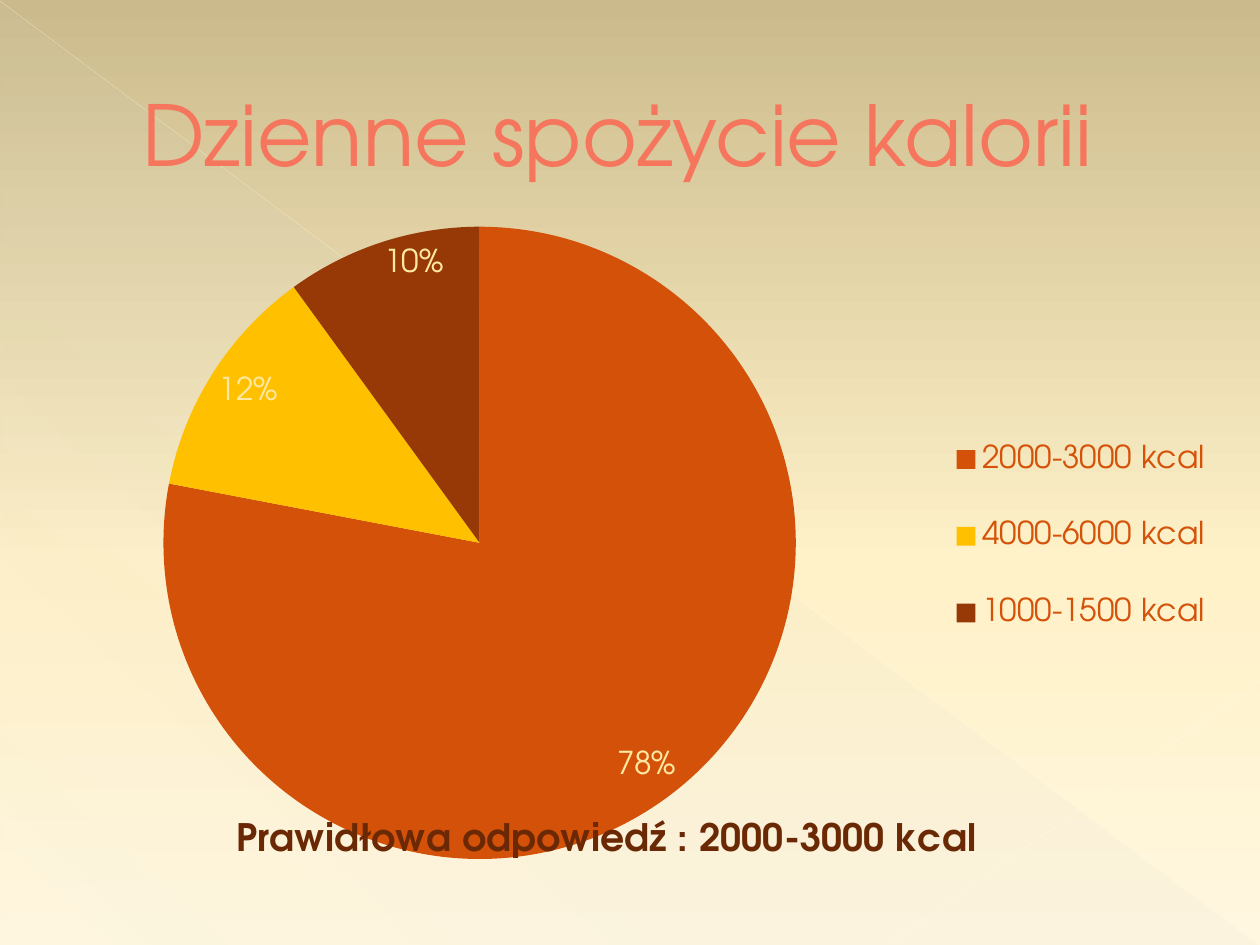
from dataclasses import dataclass

from lxml import etree
from pptx import Presentation
from pptx.chart.data import CategoryChartData
from pptx.dml.color import RGBColor
from pptx.enum.chart import XL_CHART_TYPE as ChartType
from pptx.enum.chart import XL_LABEL_POSITION as LabelPosition
from pptx.enum.chart import XL_LEGEND_POSITION as LegendPosition
from pptx.enum.shapes import MSO_CONNECTOR as Connector
from pptx.enum.shapes import MSO_SHAPE as Shape
from pptx.enum.text import MSO_ANCHOR as Anchor
from pptx.oxml import parse_xml
from pptx.oxml.ns import nsdecls, qn
from pptx.util import Cm, Pt


@dataclass(frozen=True)
class Theme:
    font: str = "TeX Gyre Adventor"
    heading: str = "F6755D"
    heading_outline: str = "933806"
    answer: str = "6A2904"
    legend: str = "D55209"
    label: str = "FFE8A2"
    slices: tuple = ("D45109", "FFC000", "963906")
    # Gradient stops: position %, colour, opacity %
    backdrop: tuple = ((0, "CBBB8C", 100), (60, "FFF1C8", 100), (100, "FFF7DF", 100))
    veil: tuple = ((0, "D2D2D2", 10), (70, "D2D2D2", 8), (100, "D2D2D2", 1))
    heading_size: float = 48
    answer_size: float = 21.6
    chart_size: float = 18


class SlideBuilder:
    def __init__(self, slide, theme):
        self.slide = slide
        self.theme = theme

    def style_font(self, font, size, color, bold=False):
        font.name = self.theme.font
        font.size = Pt(size)
        font.bold = bold
        font.color.rgb = RGBColor.from_string(color)

    def set_gradient(self, fill, stops, angle):
        fill.gradient()
        fill.gradient_angle = -angle % 360
        stop_list = fill.gradient_stops[0]._gs.getparent()
        for stop in list(stop_list):
            stop_list.remove(stop)
        for position, color, opacity in stops:
            stop_list.append(parse_xml(
                f'<a:gs {nsdecls("a")} pos="{position * 1000}"><a:srgbClr val="{color}">'
                f'<a:alpha val="{opacity * 1000}"/></a:srgbClr></a:gs>'))

    def background(self):
        self.set_gradient(self.slide.background.fill, self.theme.backdrop, 90)

    def veil(self, left, top, width, height):
        triangle = self.slide.shapes.add_shape(
            Shape.RIGHT_TRIANGLE, Cm(left), Cm(top), Cm(width), Cm(height))
        triangle.shadow.inherit = False
        triangle.line.fill.background()
        self.set_gradient(triangle.fill, self.theme.veil, 133)

    def line(self, start, end, color, width, opacity):
        ray = self.slide.shapes.add_connector(
            Connector.STRAIGHT, *(Cm(value) for value in start + end))
        ray.line.width = Pt(width)
        ray.line.color.rgb = RGBColor.from_string(color)
        tint = ray.line._ln.find(".//" + qn("a:srgbClr"))
        etree.SubElement(tint, qn("a:alpha")).set("val", str(opacity * 1000))
        etree.SubElement(ray._element.spPr, qn("a:effectLst"))

    def heading(self, text, left, top, width, height, indent):
        frame = self.slide.shapes.add_textbox(
            Cm(left), Cm(top), Cm(width), Cm(height)).text_frame
        frame.word_wrap = True
        frame.vertical_anchor = Anchor.MIDDLE
        paragraph = frame.paragraphs[0]
        paragraph._p.get_or_add_pPr().set("marL", str(Cm(indent)))
        run = paragraph.add_run()
        run.text = text
        self.style_font(run.font, self.theme.heading_size, self.theme.heading)
        run._r.rPr.insert(0, parse_xml(
            f'<a:ln {nsdecls("a")} w="{Pt(0.5)}"><a:solidFill>'
            f'<a:srgbClr val="{self.theme.heading_outline}"/></a:solidFill></a:ln>'))

    def place(self, element, inner=False, **box):
        """Give a chart part a manual layout in fractions of the chart."""
        for old in element.findall(qn("c:layout")):
            element.remove(old)
        target = '<c:layoutTarget val="inner"/>' if inner else ""
        modes = "".join(f'<c:{key}Mode val="edge"/>' for key in "xy")
        sizes = "".join(f'<c:{key} val="{value}"/>' for key, value in box.items())
        layout = parse_xml(f'<c:layout {nsdecls("c")}><c:manualLayout>'
                           f'{target}{modes}{sizes}</c:manualLayout></c:layout>')
        before = [child for child in element
                  if child.tag in (qn("c:tx"), qn("c:legendPos"))]
        element.insert(len(before), layout)

    def pie(self, shares, answer, left, top, width, height):
        theme = self.theme
        data = CategoryChartData()
        data.categories = list(shares)
        data.add_series("Series 1", list(shares.values()))
        chart = self.slide.shapes.add_chart(
            ChartType.PIE, Cm(left), Cm(top), Cm(width), Cm(height), data).chart
        self.style_font(chart.font, theme.chart_size, theme.label)

        # Slices and percentages
        plot = chart.plots[0]
        plot.vary_by_categories = True
        for index, color in enumerate(theme.slices):
            fill = plot.series[0].points[index].format.fill
            fill.solid()
            fill.fore_color.rgb = RGBColor.from_string(color)
        plot.has_data_labels = True
        labels = plot.data_labels
        labels.show_percentage = True
        labels.show_value = False
        labels.number_format = "0%"
        labels.number_format_is_linked = False
        labels.position = LabelPosition.INSIDE_END
        self.style_font(labels.font, theme.chart_size, theme.label)
        plot_area = chart._chartSpace.chart.plotArea
        self.place(plot_area, inner=True, x=0, y=0, w=0.74, h=0.96)

        # Legend
        chart.has_legend = True
        legend = chart.legend
        legend.position = LegendPosition.RIGHT
        legend.include_in_layout = False
        self.style_font(legend.font, theme.chart_size, theme.legend)
        self.place(legend._element, x=0.76, y=0.26, w=0.23, h=0.42)

        # Correct answer as the chart title
        chart.has_title = True
        title = chart.chart_title
        run = title.text_frame.paragraphs[0].add_run()
        run.text = answer
        self.style_font(run.font, theme.answer_size, theme.answer, bold=True)
        title._element.get_or_add_overlay().set("val", "1") if hasattr(
            title._element, "get_or_add_overlay") else None
        self.place(title._element, x=0.16, y=0.89)


def main():
    deck = Presentation()
    deck.slide_width, deck.slide_height = Cm(25.4), Cm(19.05)
    builder = SlideBuilder(deck.slides.add_slide(deck.slide_layouts[6]), Theme())

    # Backdrop
    builder.background()
    builder.veil(0.02, 0.05, 25.35, 19)
    builder.line((0, 0.02), (25.38, 19.02), "FFFAEB", 0.39, 35)
    builder.line((25.4, 13.74), (17.95, 19.02), "FFFAED", 0.47, 45)

    # Content
    builder.heading("Dzienne spożycie kalorii", 1.27, 0.74, 22.86, 3.89, indent=1.35)
    builder.pie({"2000-3000 kcal": 78, "4000-6000 kcal": 12, "1000-1500 kcal": 10},
                "Prawidłowa odpowiedź : 2000-3000 kcal", 0.79, 4.57, 24, 13.28)

    deck.save("out.pptx")


if __name__ == "__main__":
    main()
